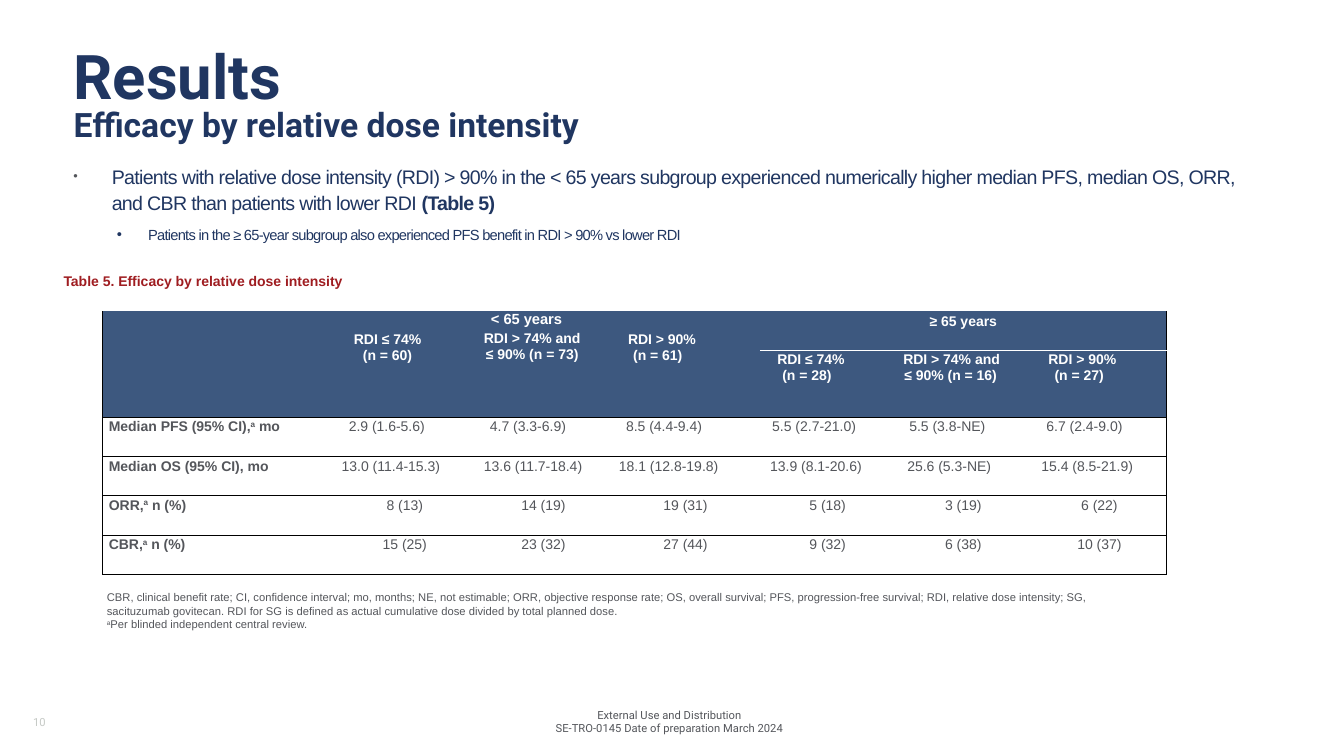
from lxml.etree import SubElement
from pptx import Presentation
from pptx.dml.color import RGBColor
from pptx.enum.text import MSO_ANCHOR, MSO_AUTO_SIZE, PP_ALIGN
from pptx.oxml.ns import qn
from pptx.util import Inches, Pt

theme = {
    "navy": "203661", "steel": "3D587F", "red": "9F1D21", "gray": "54565B",
    "pale": "C6CAC6", "white": "FFFFFF", "black": "000000",
    "head": "Roboto", "body": "Arial",
    "title": 44, "sub": 24, "lead": 14, "point": 10.5, "cell": 10, "note": 8,
}

deck = Presentation()
deck.slide_width, deck.slide_height = Inches(13.33), Inches(7.5)
slide = deck.slides.add_slide(deck.slide_layouts[5])


def area(x, y, w, h):
    wide, high = deck.slide_width / 100, deck.slide_height / 100
    return int(x * wide), int(y * high), int(w * wide), int(h * high)


def write(para, text, size, tint, face="body", bold=False, space=0):
    for part in text.split("|"):
        run = para.add_run()
        run.text = part.lstrip("^*")
        font = run.font
        font.name, font.size = theme[face], Pt(theme[size])
        font.bold = bold or part.startswith("*")
        font.color.rgb = RGBColor.from_string(theme[tint])
        if part.startswith("^"):
            font._element.set("baseline", "32000")
        if space:
            font._element.set("spc", str(space))


title = slide.shapes.title
title.left, title.top, title.width, title.height = area(4.73, 5.33, 90.02, 14.4)
frame = title.text_frame
frame.auto_size = MSO_AUTO_SIZE.NONE
frame.vertical_anchor = MSO_ANCHOR.BOTTOM
frame.text = "Results\vEfficacy by relative dose intensity"
para = frame.paragraphs[0]
para.alignment, para.line_spacing = PP_ALIGN.LEFT, 0.8
for run, size in zip(para.runs, ("title", "sub")):
    run.font.name, run.font.size, run.font.bold = theme["head"], Pt(theme[size]), True
    run.font.color.rgb = RGBColor.from_string(theme["navy"])

frame = slide.shapes.add_textbox(*area(4.73, 20.67, 90.02, 64.53)).text_frame
frame.word_wrap = True
points = [
    ("Patients with relative dose intensity (RDI) > 90% in the < 65 years subgroup "
     "experienced numerically higher median PFS, median OS, ORR, and CBR than patients "
     "with lower RDI |*(Table 5)", "lead", 0.38, 0.38, "gray", 65),
    ("Patients in the ≥ 65-year subgroup also experienced PFS benefit in "
     "RDI > 90% vs lower RDI", "point", 0.74, 0.31, "navy", 100),
]
for level, (text, size, left, hang, tint, scale) in enumerate(points):
    para = frame.add_paragraph() if level else frame.paragraphs[0]
    para.level, para.line_spacing, para.space_after = level, 1.14, Pt(6)
    props = para._p.get_or_add_pPr()
    props.set("marL", str(Inches(left)))
    props.set("indent", str(-Inches(hang)))
    SubElement(SubElement(props, qn("a:buClr")), qn("a:srgbClr")).set("val", theme[tint])
    SubElement(props, qn("a:buSzPct")).set("val", str(scale * 1000))
    SubElement(props, qn("a:buFont")).set("typeface", theme["body"])
    SubElement(props, qn("a:buChar")).set("char", "•")
    write(para, text, size, "navy", space=-50)

left, mid = PP_ALIGN.LEFT, PP_ALIGN.CENTER
notes = [
    ((4.73, 35.73, 27.23, 2.53), ["Table 5. Efficacy by relative dose intensity"],
     "cell", "red", "body", True, left, 0, 0.02, MSO_ANCHOR.TOP),
    ((6.9, 77.47, 79.82, 6.8),
     ["CBR, clinical benefit rate; CI, confidence interval; mo, months; NE, not estimable; "
      "ORR, objective response rate; OS, overall survival; PFS, progression-free survival; "
      "RDI, relative dose intensity; SG, sacituzumab govitecan. RDI for SG is defined as "
      "actual cumulative dose divided by total planned dose.",
      "^a|Per blinded independent central review."],
     "note", "gray", "body", False, left, 0.14, 0.05, MSO_ANCHOR.TOP),
    ((38.56, 93.33, 22.51, 4.27),
     ["External Use and Distribution", "SE-TRO-0145 Date of preparation March 2024"],
     "note", "gray", "head", False, mid, 0.1, 0.05, MSO_ANCHOR.MIDDLE),
    ((1.73, 93.33, 22.51, 4.27), ["10"],
     "note", "pale", "head", False, left, 0.1, 0.05, MSO_ANCHOR.MIDDLE),
]
for place, lines, size, tint, face, bold, align, side, top, anchor in notes:
    frame = slide.shapes.add_textbox(*area(*place)).text_frame
    frame.word_wrap, frame.vertical_anchor = True, anchor
    frame.margin_left = frame.margin_right = Inches(side)
    frame.margin_top = Inches(top)
    for i, text in enumerate(lines):
        para = frame.add_paragraph() if i else frame.paragraphs[0]
        para.alignment = align
        write(para, text, size, tint, face, bold)

table = slide.shapes.add_table(6, 7, *area(7.65, 41.2, 79.14, 34.8)).table
table.first_row = table.horz_banding = False
table._tbl.tblPr.find(qn("a:tableStyleId")).text = "{2D5ABB26-0587-4C30-8999-92F81FD0307C}"
for col, width in zip(table.columns, (2.22, 1.48, 1.34, 1.48, 1.33, 1.37, 1.33)):
    col.width = Inches(width)
for i, row in enumerate(table.rows):
    row.height = Inches(0.66 if i == 1 else 0.39)
for start, end in (((0, 0), (1, 1)), ((0, 2), (1, 2)), ((0, 3), (1, 3)), ((0, 4), (0, 6))):
    table.cell(*start).merge(table.cell(*end))

heads = [
    (0, 0, 0.2, [("RDI ≤ 74%", 2.49), ("(n = 60)", 2.58)]),
    (0, 2, 0, [("< 65 years", 0.15), ("RDI > 74% and", 0.08), ("≤ 90% (n = 73)", 0.1)]),
    (0, 3, 0.2, [("RDI > 90%", 0.17), ("(n = 61)", 0.22)]),
    (0, 4, 0.02, [("≥ 65 years", 0)]),
    (1, 4, 0.01, [("RDI ≤ 74%", 0.17), ("(n = 28)", 0.22)]),
    (1, 5, 0.01, [("RDI > 74% and", 0.09), ("≤ 90% (n = 16)", 0.1)]),
    (1, 6, 0.01, [("RDI > 90%", 0.16), ("(n = 27)", 0.22)]),
]
data = [
    ("Median PFS (95% CI),|^a| mo", "2.9 (1.6-5.6)", "4.7 (3.3-6.9)", "8.5 (4.4-9.4)",
     "5.5 (2.7-21.0)", "5.5 (3.8-NE)", "6.7 (2.4-9.0)"),
    ("Median OS (95% CI), mo", "13.0 (11.4-15.3)", "13.6 (11.7-18.4)", "18.1 (12.8-19.8)",
     "13.9 (8.1-20.6)", "25.6 (5.3-NE)", "15.4 (8.5-21.9)"),
    ("ORR,|^a| n (%)", "8 (13)", "14 (19)", "19 (31)", "5 (18)", "3 (19)", "6 (22)"),
    ("CBR,|^a| n (%)", "15 (25)", "23 (32)", "27 (44)", "9 (32)", "6 (38)", "10 (37)"),
]
shift = [
    (0.06, 0.22, 0.14, 0.15, 0.12, 0.15, 0.14),
    (0.06, 0.15, 0.08, 0.08, 0.1, 0.13, 0.09),
    (0.06, 0.07, 0, 0, 0.01, 0, 0),
    (0.06, 0.07, 0, 0, 0.01, 0, 0),
]
cells = heads + [
    (r + 2, c, 0.02, [(text, shift[r][c])])
    for r, line in enumerate(data) for c, text in enumerate(line)
]
for r, c, top, lines in cells:
    cell = table.cell(r, c)
    cell.margin_left = cell.margin_right = cell.margin_bottom = 0
    cell.margin_top = Inches(top)
    for i, (text, dent) in enumerate(lines):
        frame = cell.text_frame
        para = frame.add_paragraph() if i else frame.paragraphs[0]
        if (r, c) == (0, 4) or (r > 3 and c):
            para.alignment = mid
        if i:
            para.space_before = Pt(2.2 if len(lines) == 3 and i == 1 else 0.5)
        para._p.get_or_add_pPr().set("marL", str(Inches(dent)))
        size = "point" if text == "< 65 years" else "cell"
        write(para, text, size, "white" if r < 2 else "gray", bold=r < 2 or c == 0)

for r in range(6):
    for c in range(7):
        cell = table.cell(r, c)
        edges = {}
        if c == 0:
            edges["lnL"] = "black"
        if c == 6 or (r, c) == (0, 4):
            edges["lnR"] = "black"
        if r > 1:
            edges["lnT"] = "black"
        elif r == 1 and c > 3:
            edges["lnT"] = "white"
        if r > 0 or c < 4:
            edges["lnB"] = "black"
        else:
            edges["lnB"] = "white"
        props = cell._tc.get_or_add_tcPr()
        for edge, tint in edges.items():
            line = SubElement(props, qn("a:" + edge), w=str(Pt(0.75)))
            fill = SubElement(line, qn("a:solidFill"))
            SubElement(fill, qn("a:srgbClr")).set("val", theme[tint])
        cell.fill.solid()
        cell.fill.fore_color.rgb = RGBColor.from_string(theme["steel" if r < 2 else "white"])

deck.save("out.pptx")
